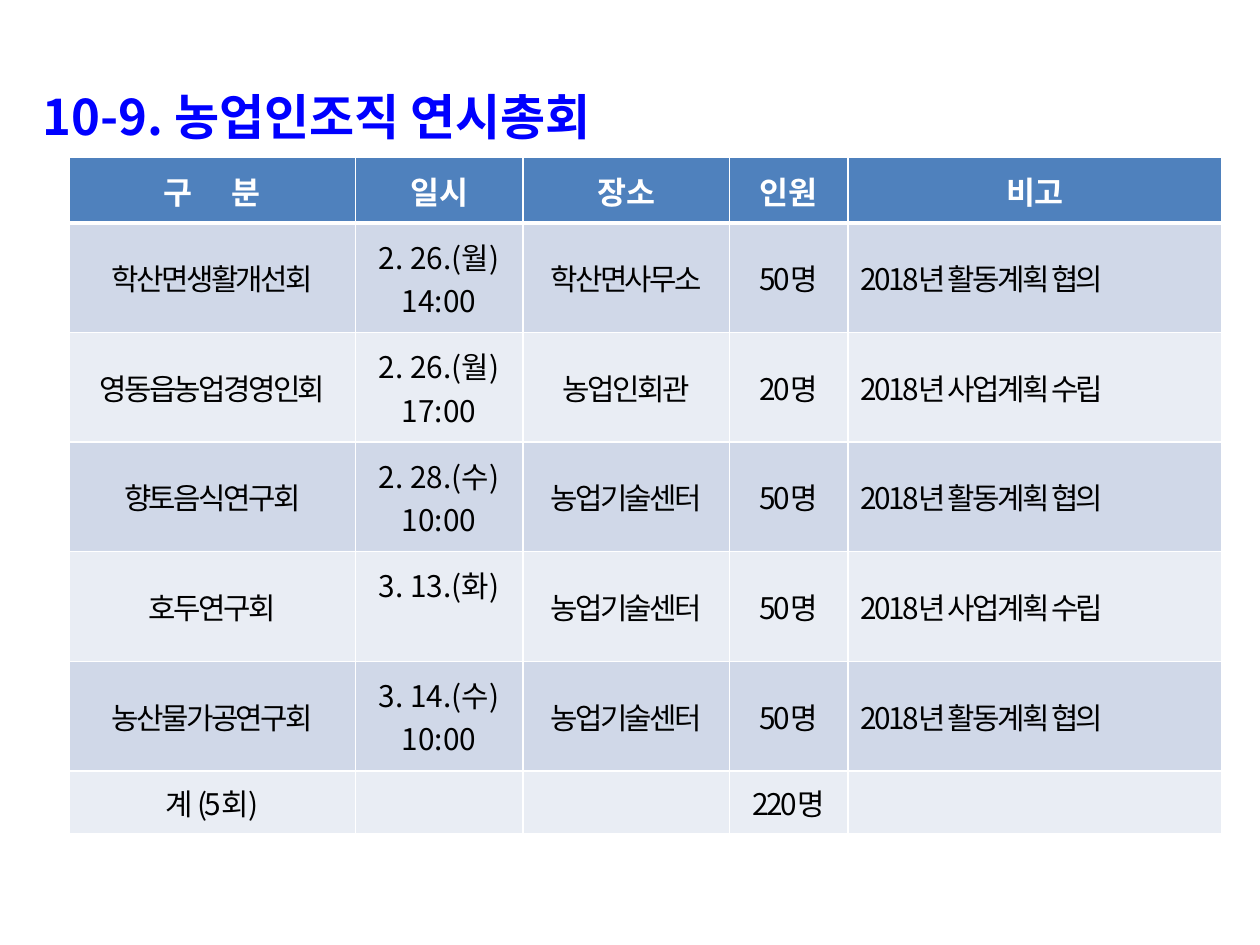
from lxml import etree
from pptx import Presentation
from pptx.dml.color import RGBColor
from pptx.enum import text as t
from pptx.oxml import ns
from pptx.util import Inches, Pt

FONT = "Noto Sans CJK KR"
BLUE = RGBColor(0x00, 0x00, 0xFF)
BLACK = RGBColor(0x00, 0x00, 0x00)
WHITE = RGBColor(0xFF, 0xFF, 0xFF)
HEADER_FILL = RGBColor(0x4F, 0x81, 0xBD)
BAND_FILLS = (RGBColor(0xD0, 0xD8, 0xE8), RGBColor(0xE9, 0xED, 0xF4))

TITLE = "10-9. 농업인조직 연시총회"
HEADERS = ["구 분", "일시", "장소", "인원", "비고"]
MEETINGS = [
    ["학산면생활개선회", "2. 26.(월) 14:00", "학산면사무소", "50명", "2018년 활동계획 협의"],
    ["영동읍농업경영인회", "2. 26.(월) 17:00", "농업인회관", "20명", "2018년 사업계획 수립"],
    ["향토음식연구회", "2. 28.(수) 10:00", "농업기술센터", "50명", "2018년 활동계획 협의"],
    ["호두연구회", "3. 13.(화)", "농업기술센터", "50명", "2018년 사업계획 수립"],
    ["농산물가공연구회", "3. 14.(수) 10:00", "농업기술센터", "50명", "2018년 활동계획 협의"],
]
TOTAL = ["계 (5회)", "", "", "220명", ""]
ROWS = [HEADERS, *MEETINGS, TOTAL]
COLUMN_WIDTHS = [2.27, 1.33, 1.64, 0.94, 2.97]
ROW_HEIGHTS = [0.52] + [0.87] * len(MEETINGS) + [0.5]
DATE_COLUMN, NOTE_COLUMN = 1, 4


def write(frame, content, size=17, color=BLACK, bold=False, align=None, tracking=0, line_spacing=None):
    paragraph = frame.paragraphs[0]
    paragraph.alignment = align
    paragraph.line_spacing = line_spacing
    run = paragraph.add_run()
    run.text = content
    run.font.size = Pt(size)
    run.font.bold = bold
    run.font.color.rgb = color
    run.font.name = FONT
    properties = run.font._element
    properties.set("spc", str(round(tracking * 100)))
    etree.SubElement(properties, ns.qn("a:ea")).set("typeface", FONT)


def set_borders(cell, bottom_width):
    properties = cell._tc.get_or_add_tcPr()
    widths = {"lnL": 1, "lnR": 1, "lnT": 1, "lnB": bottom_width}
    for position, (side, width) in enumerate(widths.items()):
        line = etree.Element(ns.qn(f"a:{side}"), w=str(Pt(width)))
        fill = etree.SubElement(line, ns.qn("a:solidFill"))
        etree.SubElement(fill, ns.qn("a:srgbClr")).set("val", str(WHITE))
        properties.insert(position, line)


def add_title(slide):
    box = slide.shapes.add_textbox(Inches(0.24), Inches(0.52), Inches(9.45), Inches(0.65))
    frame = box.text_frame
    frame.word_wrap = True
    frame.vertical_anchor = t.MSO_ANCHOR.MIDDLE
    frame.margin_top = Inches(0.11)
    write(frame, TITLE, size=28, color=BLUE, bold=True, line_spacing=1.2)


def add_schedule(slide):
    frame = slide.shapes.add_table(
        len(ROWS), len(HEADERS), Inches(0.55), Inches(1.25),
        Inches(sum(COLUMN_WIDTHS)), Inches(sum(ROW_HEIGHTS)))
    table = frame.table
    for column, width in zip(table.columns, COLUMN_WIDTHS):
        column.width = Inches(width)
    for row, height in zip(table.rows, ROW_HEIGHTS):
        row.height = Inches(height)
    for row_index, values in enumerate(ROWS):
        is_header = row_index == 0
        for column_index, value in enumerate(values):
            cell = table.cell(row_index, column_index)
            cell.vertical_anchor = t.MSO_ANCHOR.MIDDLE
            cell.fill.solid()
            cell.fill.fore_color.rgb = HEADER_FILL if is_header else BAND_FILLS[(row_index - 1) % 2]
            set_borders(cell, 3 if is_header else 1)
            if is_header:
                write(cell.text_frame, value, size=18, color=WHITE, bold=True,
                      align=t.PP_ALIGN.CENTER, tracking=9 if column_index == 0 else 0)
            elif value:
                is_date = column_index == DATE_COLUMN
                if is_date and " " not in value.split(")")[1] :
                    cell.margin_bottom = Inches(0.4)
                write(cell.text_frame, value, tracking=0 if is_date else -1.5,
                      align=t.PP_ALIGN.LEFT if column_index == NOTE_COLUMN else t.PP_ALIGN.CENTER)


def main():
    presentation = Presentation()
    presentation.slide_width = Inches(10)
    presentation.slide_height = Inches(7.5)
    slide = presentation.slides.add_slide(presentation.slide_layouts[6])
    add_title(slide)
    add_schedule(slide)
    presentation.save("out.pptx")


if __name__ == "__main__":
    main()
